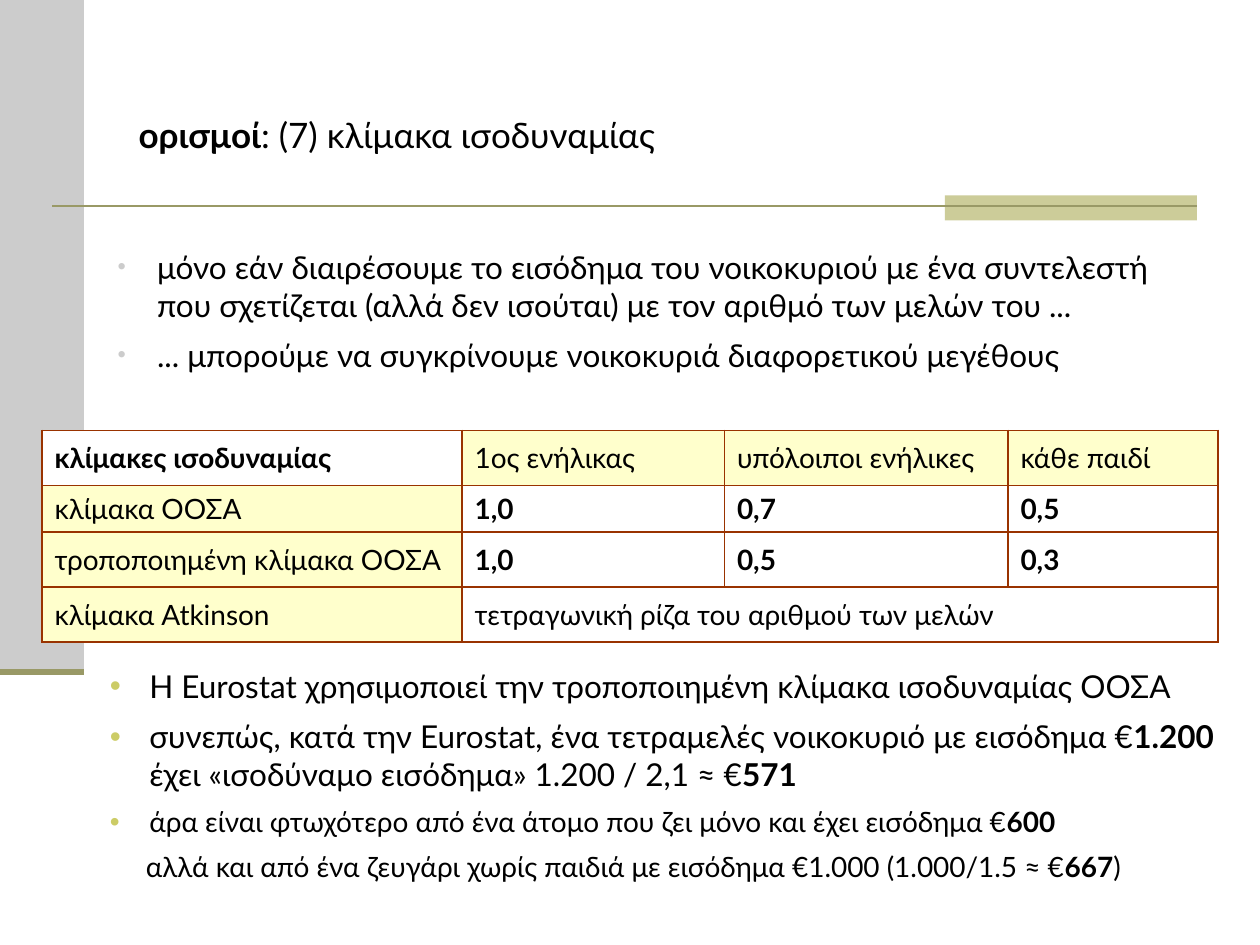
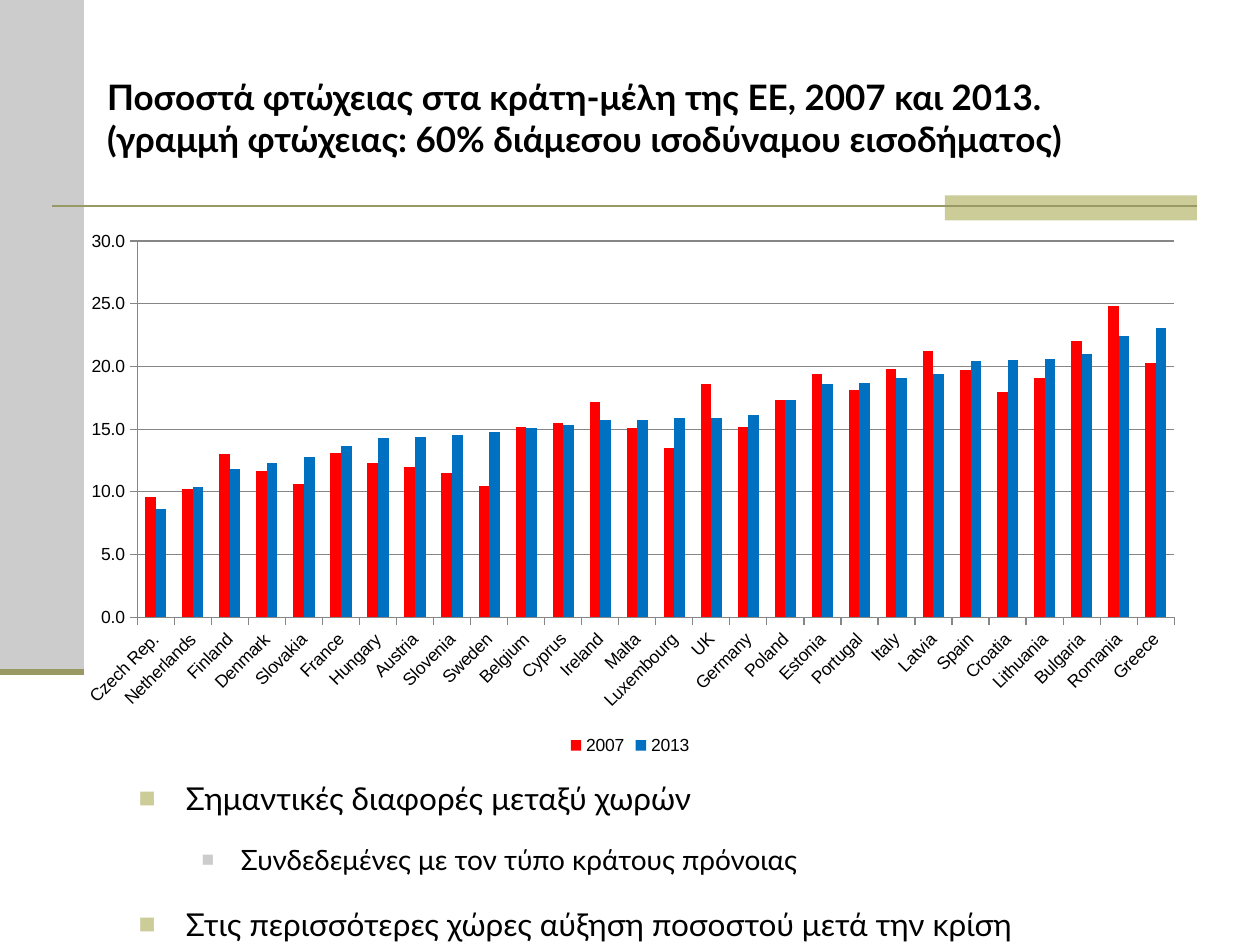
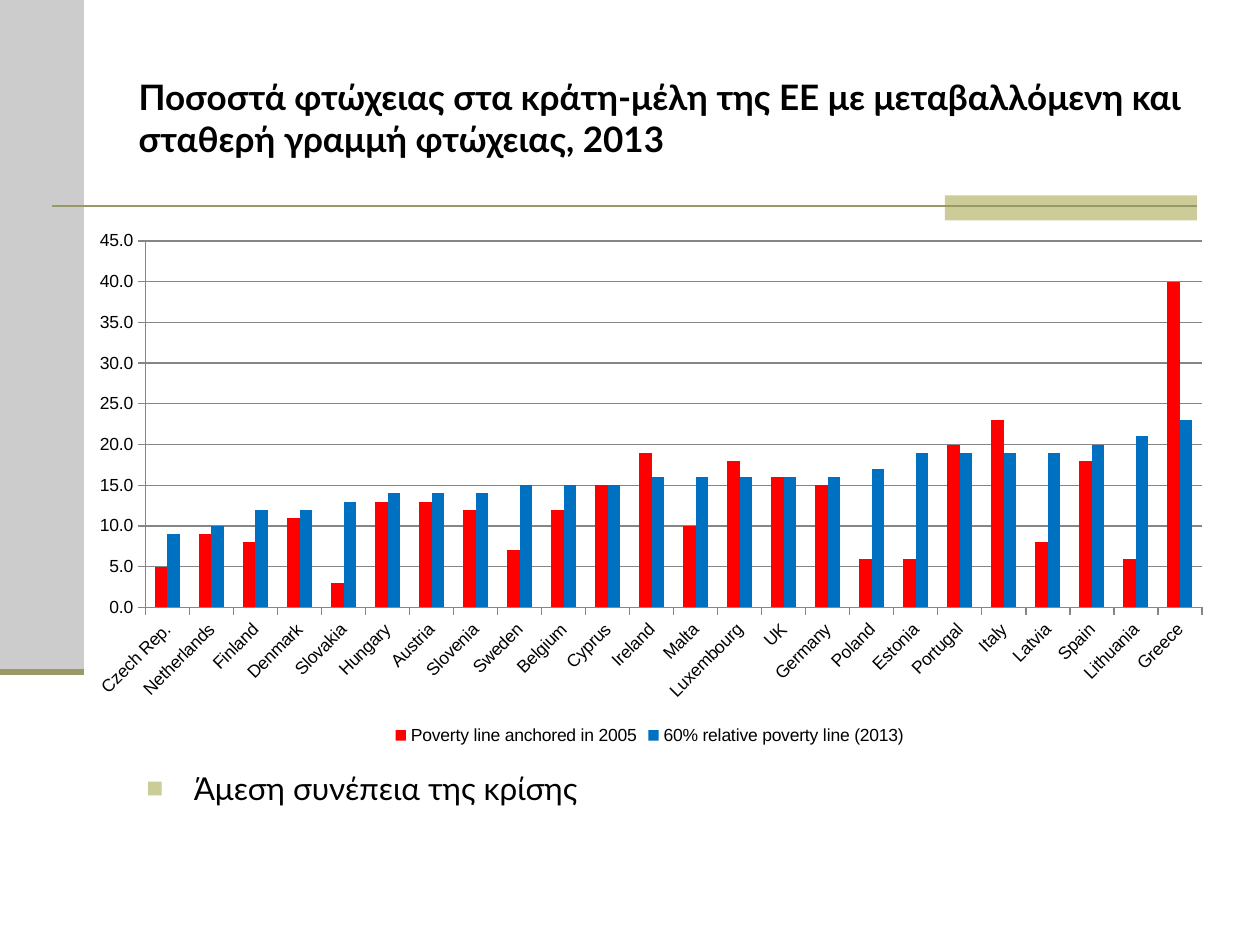
import lxml.etree
import pptx
import pptx.chart.data
import pptx.dml.color
import pptx.enum.chart
import pptx.enum.shapes
import pptx.enum.text
import pptx.oxml.ns
import pptx.util

Pt = pptx.util.Pt
qn = pptx.oxml.ns.qn

# Shared look
TEXT_FONT, CHART_FONT = "Lato", "Arial"
BLACK, WHITE, GREY = "000000", "FFFFFF", "CCCCCC"
KHAKI, OLIVE, LIME, CREAM, BROWN = "CCCC99", "999966", "CCCC66", "FFFFCC", "993300"
SERIES_COLOURS = ("FF0000", "0070C0")
GRID_GREY = "868686"

# Poverty rates by country: 2007, 2013
POVERTY_RATES = {
    "Czech Rep.": (9.6, 8.6), "Netherlands": (10.2, 10.4), "Finland": (13, 11.8),
    "Denmark": (11.7, 12.3), "Slovakia": (10.6, 12.8), "France": (13.1, 13.7),
    "Hungary": (12.3, 14.3), "Austria": (12, 14.4), "Slovenia": (11.5, 14.5),
    "Sweden": (10.5, 14.8), "Belgium": (15.2, 15.1), "Cyprus": (15.5, 15.3),
    "Ireland": (17.2, 15.7), "Malta": (15.1, 15.7), "Luxembourg": (13.5, 15.9),
    "UK": (18.6, 15.9), "Germany": (15.2, 16.1), "Poland": (17.3, 17.3),
    "Estonia": (19.4, 18.6), "Portugal": (18.1, 18.7), "Italy": (19.8, 19.1),
    "Latvia": (21.2, 19.4), "Spain": (19.7, 20.4), "Croatia": (18, 20.5),
    "Lithuania": (19.1, 20.6), "Bulgaria": (22, 21), "Romania": (24.8, 22.4),
    "Greece": (20.3, 23.1),
}
# Rates in 2013 with the poverty line anchored in 2005
ANCHORED_RATES = {
    "Czech Rep.": 5, "Netherlands": 9, "Finland": 8, "Denmark": 11, "Slovakia": 3,
    "Hungary": 13, "Austria": 13, "Slovenia": 12, "Sweden": 7, "Belgium": 12,
    "Cyprus": 15, "Ireland": 19, "Malta": 10, "Luxembourg": 18, "UK": 16,
    "Germany": 15, "Poland": 6, "Estonia": 6, "Portugal": 20, "Italy": 23,
    "Latvia": 8, "Spain": 18, "Lithuania": 6, "Greece": 40,
}

# List styles: level, left margin, first-line indent, bullet, its colour and size in %
GREY_DOT = (1, 58.5, -22.5, "•", GREY, 75)
LIME_DOT = (1, 58.5, -22.5, "•", LIME, 100)
NO_BULLET = (1, 56.5, 0, None, None, None)
KHAKI_SQUARE = (0, 27, -27, "■", KHAKI, 90)
GREY_SQUARE = (1, 58.5, -22.5, "■", GREY, 75)


def rgb(colour):
    return pptx.dml.color.RGBColor.from_string(colour)


def points(*lengths):
    return [Pt(length) for length in lengths]


def place(shape, box):
    shape.left, shape.top, shape.width, shape.height = points(*box)


def add_runs(paragraph, text, size):
    """Add text run by run; the parts between asterisks are bold."""
    for line_number, line in enumerate(text.split("\n")):
        if line_number:
            paragraph.add_line_break()
        for part_number, part in enumerate(line.split("*")):
            if part:
                run = paragraph.add_run()
                run.text = part
                run.font.name = TEXT_FONT
                run.font.size = Pt(size)
                run.font.bold = part_number % 2 == 1
                run.font.color.rgb = rgb(BLACK)


# Frame behind every slide
def add_rectangle(slide, box, colour):
    shape = slide.shapes.add_shape(
        pptx.enum.shapes.MSO_SHAPE.RECTANGLE, *points(*box))
    shape.shadow.inherit = False
    shape.fill.solid()
    shape.fill.fore_color.rgb = rgb(colour)
    shape.line.fill.background()
    return shape


def add_line(slide, ends, width):
    line = slide.shapes.add_connector(
        pptx.enum.shapes.MSO_CONNECTOR.STRAIGHT, *points(*ends))
    line.line.color.rgb = rgb(OLIVE)
    line.line.width = Pt(width)
    lxml.etree.SubElement(line._element.spPr, qn("a:effectLst"))
    return line


def move_frame_to_master(presentation, slide):
    frame = [
        add_rectangle(slide, (0, 0, 48, 384), GREY),
        add_rectangle(slide, (540, 111.6, 144, 14.4), KHAKI),
        add_line(slide, (30, 117.7, 684, 117.7), 1.5),
        add_line(slide, (0, 384, 48, 384), 3.5),
    ]
    for shape in frame:
        presentation.slide_master.shapes._spTree.append(shape._element)


# Text
def add_titled_slide(presentation, title, box):
    slide = presentation.slides.add_slide(presentation.slide_layouts[1])
    place(slide.shapes.title, box)
    frame = slide.shapes.title.text_frame
    frame.auto_size = pptx.enum.text.MSO_AUTO_SIZE.NONE
    frame.vertical_anchor = pptx.enum.text.MSO_ANCHOR.MIDDLE
    paragraph = frame.paragraphs[0]
    paragraph.alignment = pptx.enum.text.PP_ALIGN.LEFT
    add_runs(paragraph, title, 20)
    return slide


def format_bullet(paragraph, style):
    level, margin, indent, character, colour, percent = style
    paragraph.level = level
    properties = paragraph._p.get_or_add_pPr()
    properties.set("marL", str(Pt(margin)))
    properties.set("indent", str(Pt(indent)))
    if character is None:
        lxml.etree.SubElement(properties, qn("a:buNone"))
        return
    bullet_colour = lxml.etree.SubElement(properties, qn("a:buClr"))
    lxml.etree.SubElement(bullet_colour, qn("a:srgbClr"), val=colour)
    lxml.etree.SubElement(properties, qn("a:buSzPct"), val=str(percent * 1000))
    lxml.etree.SubElement(properties, qn("a:buFont"), typeface=CHART_FONT)
    lxml.etree.SubElement(properties, qn("a:buChar"), char=character)


def fill_list(shape, items, line_spacing=1.0, space_after=0.2):
    """Write (style, size, text) items; spacing is a share of the text size."""
    frame = shape.text_frame
    frame.word_wrap = True
    frame.auto_size = pptx.enum.text.MSO_AUTO_SIZE.NONE
    for number, (style, size, text) in enumerate(items):
        paragraph = frame.add_paragraph() if number else frame.paragraphs[0]
        paragraph.line_spacing = line_spacing
        paragraph.space_before = Pt(size * 0.2)
        paragraph.space_after = Pt(size * space_after)
        format_bullet(paragraph, style)
        add_runs(paragraph, text, size)


def fill_body(slide, box, items, **spacing):
    body = slide.placeholders[1]
    place(body, box)
    fill_list(body, items, **spacing)


# Table
def format_cell(cell, text, colour):
    cell.vertical_anchor = pptx.enum.text.MSO_ANCHOR.MIDDLE
    add_runs(cell.text_frame.paragraphs[0], text, 16)
    properties = cell._tc.get_or_add_tcPr()
    for side in ("a:lnL", "a:lnR", "a:lnT", "a:lnB"):
        border = lxml.etree.SubElement(properties, qn(side), w=str(Pt(1)))
        fill = lxml.etree.SubElement(border, qn("a:solidFill"))
        lxml.etree.SubElement(fill, qn("a:srgbClr"), val=BROWN)
    if colour:
        cell.fill.solid()
        cell.fill.fore_color.rgb = rgb(colour)
    else:
        cell.fill.background()


def add_scale_table(slide, rows, left, top, widths, heights):
    table = slide.shapes.add_table(
        len(rows), len(widths),
        *points(left, top, sum(widths), sum(heights))).table
    table.first_row = table.horz_banding = False
    for column, width in zip(table.columns, widths):
        column.width = Pt(width)
    for row, height in zip(table.rows, heights):
        row.height = Pt(height)
    for row_number, texts in enumerate(rows):
        for column_number, text in enumerate(texts):
            if row_number == column_number == 0:
                colour = WHITE
            else:
                colour = CREAM if 0 in (row_number, column_number) else None
            format_cell(table.cell(row_number, column_number), text, colour)
    last = len(rows) - 1
    table.cell(last, 1).merge(table.cell(last, len(widths) - 1))


# Chart
def add_rate_chart(slide, box, countries, series):
    data = pptx.chart.data.CategoryChartData(number_format="#,##0.0")
    data.categories = countries
    for name, values in series:
        data.add_series(name, values)
    chart = slide.shapes.add_chart(
        pptx.enum.chart.XL_CHART_TYPE.COLUMN_CLUSTERED, *points(*box), data).chart
    chart.has_title = False
    chart.font.name = CHART_FONT
    chart.font.size = Pt(10)
    chart.font.color.rgb = rgb(BLACK)
    chart.has_legend = True
    chart.legend.position = pptx.enum.chart.XL_LEGEND_POSITION.BOTTOM
    chart.legend.include_in_layout = False

    plot = chart.plots[0]
    plot.gap_width = 150
    plot.vary_by_categories = False
    for bars, colour in zip(plot.series, SERIES_COLOURS):
        bars.invert_if_negative = False
        bars.format.fill.solid()
        bars.format.fill.fore_color.rgb = rgb(colour)

    value_axis, category_axis = chart.value_axis, chart.category_axis
    value_axis.tick_labels.number_format = "#,##0.0"
    value_axis.tick_labels.number_format_is_linked = False
    value_axis.has_major_gridlines = True
    for line in (value_axis.major_gridlines.format.line,
                 value_axis.format.line, category_axis.format.line):
        line.color.rgb = rgb(GRID_GREY)
        line.width = Pt(0.75)
    for axis in (value_axis, category_axis):
        axis.major_tick_mark = pptx.enum.chart.XL_TICK_MARK.OUTSIDE


# Slides
def add_equivalence_slide(presentation):
    slide = add_titled_slide(
        presentation, "*ορισμοί*: (7) κλίμακα ισοδυναμίας", (72, 42, 612, 70))
    fill_body(slide, (24, 138, 666, 84), [
        (GREY_DOT, 18, "μόνο εάν διαιρέσουμε το εισόδημα του νοικοκυριού με ένα συντελεστή "
                       "που σχετίζεται (αλλά δεν ισούται) με τον αριθμό των μελών του ..."),
        (GREY_DOT, 18, "... μπορούμε να συγκρίνουμε νοικοκυριά διαφορετικού μεγέθους"),
    ])
    add_scale_table(slide, [
        ("*κλίμακες ισοδυναμίας*", "1ος ενήλικας", "υπόλοιποι ενήλικες", "κάθε παιδί"),
        ("κλίμακα ΟΟΣΑ", "*1,0*", "*0,7*", "*0,5*"),
        ("τροποποιημένη κλίμακα ΟΟΣΑ", "*1,0*", "*0,5*", "*0,3*"),
        ("κλίμακα Atkinson", "τετραγωνική ρίζα του αριθμού των μελών", "", ""),
    ], 24, 246, (240, 150, 162, 120), (31.5, 26.5, 31.5, 31.5))
    conclusions = slide.shapes.add_textbox(*points(19.75, 377.6, 682.5, 144))
    fill_list(conclusions, [
        (LIME_DOT, 18, "Η Eurostat χρησιμοποιεί την τροποποιημένη κλίμακα ισοδυναμίας ΟΟΣΑ"),
        (LIME_DOT, 18, "συνεπώς, κατά την Eurostat, ένα τετραμελές νοικοκυριό με εισόδημα "
                       "€*1.200* έχει «ισοδύναμο εισόδημα» 1.200 / 2,1 ≈ €*571*"),
        (LIME_DOT, 16, "άρα είναι φτωχότερο από ένα άτομο που ζει μόνο και έχει "
                       "εισόδημα €*600*"),
        (NO_BULLET, 16, "αλλά και από ένα ζευγάρι χωρίς παιδιά με εισόδημα €1.000 "
                        "(1.000/1.5 ≈ €*667*)"),
    ])
    return slide


def add_rates_slide(presentation):
    slide = add_titled_slide(
        presentation,
        "*Ποσοστά φτώχειας στα κράτη-μέλη της ΕΕ, 2007 και 2013.*\n"
        "*(γραμμή φτώχειας: 60% διάμεσου ισοδύναμου εισοδήματος)*",
        (54, 22, 630, 90))
    rates_2007, rates_2013 = zip(*POVERTY_RATES.values())
    add_rate_chart(slide, (36, 126, 648, 308.5), list(POVERTY_RATES),
                   [("2007", rates_2007), ("2013", rates_2013)])
    fill_body(slide, (72, 428.5, 612, 111.5), [
        (KHAKI_SQUARE, 18, "Σημαντικές διαφορές μεταξύ χωρών"),
        (GREY_SQUARE, 16, "Συνδεδεμένες με τον τύπο κράτους πρόνοιας"),
        (KHAKI_SQUARE, 18, "Στις περισσότερες χώρες αύξηση ποσοστού μετά την κρίση"),
    ], line_spacing=1.6, space_after=0)


def add_anchored_slide(presentation):
    slide = add_titled_slide(
        presentation,
        "*Ποσοστά φτώχειας στα κράτη-μέλη της ΕΕ με μεταβαλλόμενη και "
        "σταθερή γραμμή φτώχειας, 2013*",
        (72, 22, 612, 90))
    relative_rates = [round(POVERTY_RATES[country][1]) for country in ANCHORED_RATES]
    add_rate_chart(slide, (42.5, 126, 657.5, 302.75), list(ANCHORED_RATES),
                   [("Poverty line anchored in 2005", ANCHORED_RATES.values()),
                    ("60% relative poverty line (2013)", relative_rates)])
    fill_body(slide, (76.5, 423, 612, 94.5),
              [(KHAKI_SQUARE, 18, "Άμεση συνέπεια της κρίσης")],
              line_spacing=1.6, space_after=0)


def main():
    presentation = pptx.Presentation()
    presentation.slide_width, presentation.slide_height = points(720, 540)
    first_slide = add_equivalence_slide(presentation)
    move_frame_to_master(presentation, first_slide)
    add_rates_slide(presentation)
    add_anchored_slide(presentation)
    presentation.save("out.pptx")


if __name__ == "__main__":
    main()
